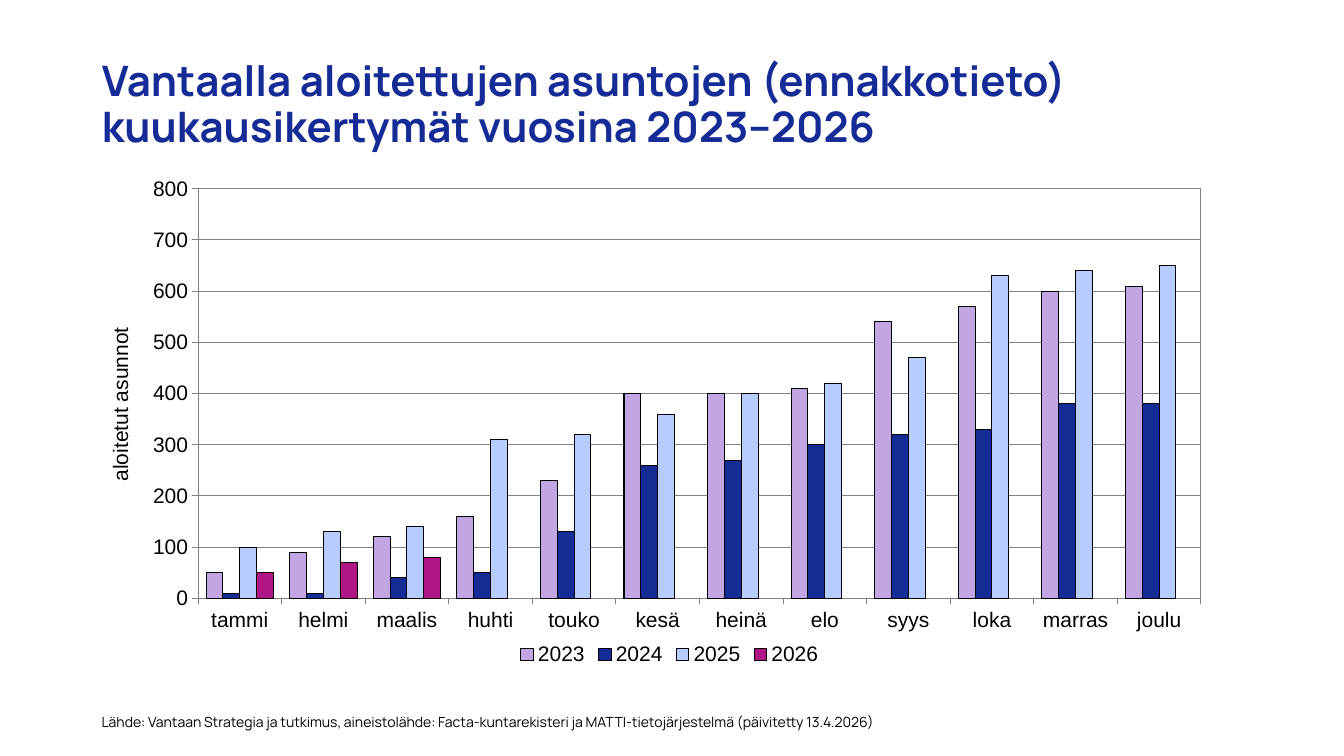
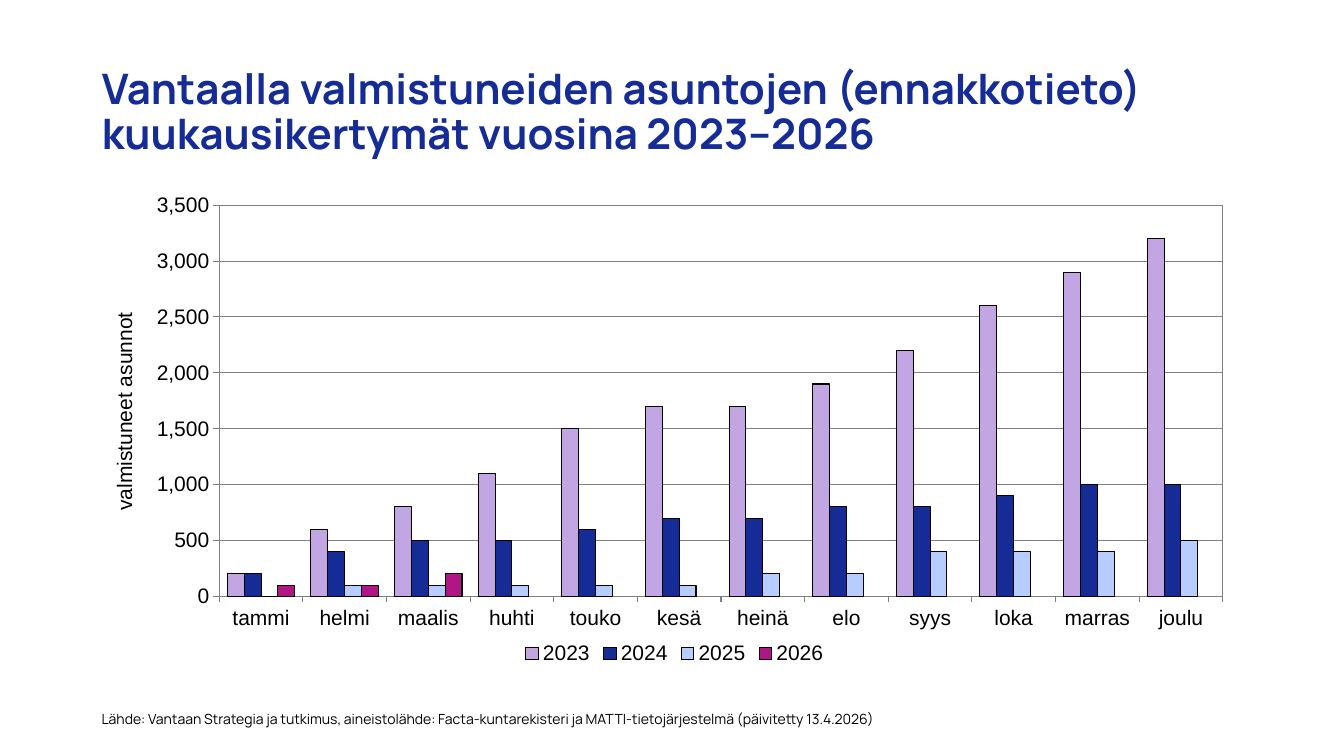
from pptx import Presentation
from pptx.chart.data import CategoryChartData
from pptx.dml.color import RGBColor
from pptx.enum.chart import XL_CHART_TYPE, XL_LEGEND_POSITION, XL_TICK_MARK
from pptx.enum.text import MSO_ANCHOR, MSO_AUTO_SIZE, PP_ALIGN
from pptx.oxml import parse_xml
from pptx.oxml.ns import nsdecls, qn
from pptx.util import Inches, Pt

BLUE = RGBColor(0x15, 0x2B, 0x96)
BLACK = RGBColor(0, 0, 0)
GREY = RGBColor(0x80, 0x80, 0x80)
SERIES_COLORS = {
    "2023": RGBColor(0xC2, 0xA6, 0xE3),
    "2024": BLUE,
    "2025": RGBColor(0xB8, 0xCD, 0xFF),
    "2026": RGBColor(0xB0, 0x17, 0x85),
}
TEXT_FONT, CHART_FONT = "Manrope", "Arial"
LINE_WIDTH = Pt(0.75)
LEFT = 0.91

MONTHS = ["tammi", "helmi", "maalis", "huhti", "touko", "kesä",
          "heinä", "elo", "syys", "loka", "marras", "joulu"]
SOURCE = ("Lähde: Vantaan Strategia ja tutkimus, aineistolähde: Facta-kuntarekisteri "
          "ja MATTI-tietojärjestelmä (päivitetty 13.4.2026)")

# Boxes are left, top, width, height in inches; plot holds fractions of the chart box
STARTED = dict(
    title="Vantaalla aloitettujen asuntojen (ennakkotieto) kuukausikertymät vuosina 2023–2026",
    title_box=(LEFT, 0.4, 11.5, 1.3),
    source_box=(LEFT, 7.03, 9.16, 0.47),
    chart_box=(1.02, 1.7, 11.24, 4.95),
    plot=(0.084, 0.035, 0.885, 0.821),
    axis_title="aloitetut asunnot", maximum=800, step=100,
    values={
        "2023": [50, 90, 120, 160, 230, 400, 400, 410, 540, 570, 600, 610],
        "2024": [10, 10, 40, 50, 130, 260, 270, 300, 320, 330, 380, 380],
        "2025": [100, 130, 140, 310, 320, 360, 400, 420, 470, 630, 640, 650],
        "2026": [50, 70, 80],
    },
)
COMPLETED = dict(
    title="Vantaalla valmistuneiden asuntojen (ennakkotieto) kuukausikertymät vuosina 2023–2026",
    title_box=(LEFT, 0.4, 11.5, 1.45),
    source_box=(LEFT, 7, 8.86, 0.49),
    chart_box=(1.06, 1.85, 11.26, 4.79),
    plot=(0.099, 0.039, 0.884, 0.81),
    axis_title="valmistuneet asunnot", maximum=3500, step=500,
    values={
        "2023": [200, 600, 800, 1100, 1500, 1700, 1700, 1900, 2200, 2600, 2900, 3200],
        "2024": [200, 400, 500, 500, 600, 700, 700, 800, 800, 900, 1000, 1000],
        "2025": [0, 100, 100, 100, 100, 100, 200, 200, 400, 400, 400, 500],
        "2026": [100, 100, 200],
    },
)


def inches(box):
    return [Inches(length) for length in box]


def set_font(font, size, color, name, bold=False):
    font.size, font.name, font.bold = Pt(size), name, bold
    font.color.rgb = color


def write_text(shape, text, *, size, color, bold=False, anchor=MSO_ANCHOR.TOP, spacing=1.0):
    frame = shape.text_frame
    frame.word_wrap = True
    frame.auto_size = MSO_AUTO_SIZE.NONE
    frame.vertical_anchor = anchor
    para = frame.paragraphs[0]
    para.alignment = PP_ALIGN.LEFT
    para.line_spacing = spacing
    span = para.add_run()
    span.text = text
    set_font(span.font, size, color, TEXT_FONT, bold)


def add_title(page, box, text):
    title = page.shapes.title
    title.left, title.top, title.width, title.height = inches(box)
    write_text(title, text, size=30, color=BLUE, bold=True,
               anchor=MSO_ANCHOR.MIDDLE, spacing=0.9)


def add_source(page, box):
    write_text(page.shapes.add_textbox(*inches(box)), SOURCE, size=10, color=BLACK)


def style_line(line, color):
    line.color.rgb = color
    line.width = LINE_WIDTH


def place_plot(chart, fractions):
    """Fix the inner plot area and give it a grey frame."""
    area = chart._chartSpace.chart.plotArea
    for old in area.findall(qn("c:layout")):
        area.remove(old)
    sizes = "".join(f'<c:{key} val="{value}"/>' for key, value in zip("xywh", fractions))
    area.insert(0, parse_xml(
        f'<c:layout {nsdecls("c")}><c:manualLayout><c:layoutTarget val="inner"/>'
        f'<c:xMode val="edge"/><c:yMode val="edge"/>{sizes}</c:manualLayout></c:layout>'))
    area.append(parse_xml(
        f'<c:spPr {nsdecls("c", "a")}><a:noFill/><a:ln w="{LINE_WIDTH}"><a:solidFill>'
        f'<a:srgbClr val="{GREY}"/></a:solidFill></a:ln></c:spPr>'))


def style_value_axis(axis, title, maximum, step):
    axis.minimum_scale, axis.maximum_scale, axis.major_unit = 0, maximum, step
    axis.has_major_gridlines = True
    style_line(axis.major_gridlines.format.line, GREY)
    axis.tick_labels.number_format = "#,##0"
    axis.tick_labels.number_format_is_linked = False
    frame = axis.axis_title.text_frame
    frame.text = title
    set_font(frame.paragraphs[0].runs[0].font, 15, BLACK, CHART_FONT)
    direction = frame._txBody.bodyPr
    direction.set("rot", "-5400000")
    direction.set("vert", "horz")


def add_column_chart(page, box, plot, axis_title, maximum, step, values):
    data = CategoryChartData(number_format="#,##0")
    data.categories = MONTHS
    for year, amounts in values.items():
        data.add_series(year, amounts + [None] * (len(MONTHS) - len(amounts)))
    chart = page.shapes.add_chart(
        XL_CHART_TYPE.COLUMN_CLUSTERED, *inches(box), data).chart
    chart.has_title = False
    set_font(chart.font, 15, BLACK, CHART_FONT)

    # Columns
    columns = chart.plots[0]
    columns.gap_width, columns.overlap = 96, 0
    columns.vary_by_categories = False
    for series in columns.series:
        series.format.fill.solid()
        series.format.fill.fore_color.rgb = SERIES_COLORS[series.name]
        style_line(series.format.line, BLACK)

    # Axes
    for axis in (chart.category_axis, chart.value_axis):
        axis.major_tick_mark = XL_TICK_MARK.OUTSIDE
        axis.minor_tick_mark = XL_TICK_MARK.NONE
        style_line(axis.format.line, GREY)
    style_value_axis(chart.value_axis, axis_title, maximum, step)

    # Legend and plot area
    chart.has_legend = True
    chart.legend.position = XL_LEGEND_POSITION.BOTTOM
    chart.legend.include_in_layout = False
    place_plot(chart, plot)


def add_chart_page(deck, title, title_box, source_box, chart_box, **chart_parts):
    page = deck.slides.add_slide(deck.slide_layouts.get_by_name("Title Only"))
    add_title(page, title_box, title)
    add_source(page, source_box)
    add_column_chart(page, chart_box, **chart_parts)


def main():
    deck = Presentation()
    deck.slide_width, deck.slide_height = Inches(13.33), Inches(7.5)
    for content in (STARTED, COMPLETED):
        add_chart_page(deck, **content)
    deck.save("out.pptx")


if __name__ == "__main__":
    main()
